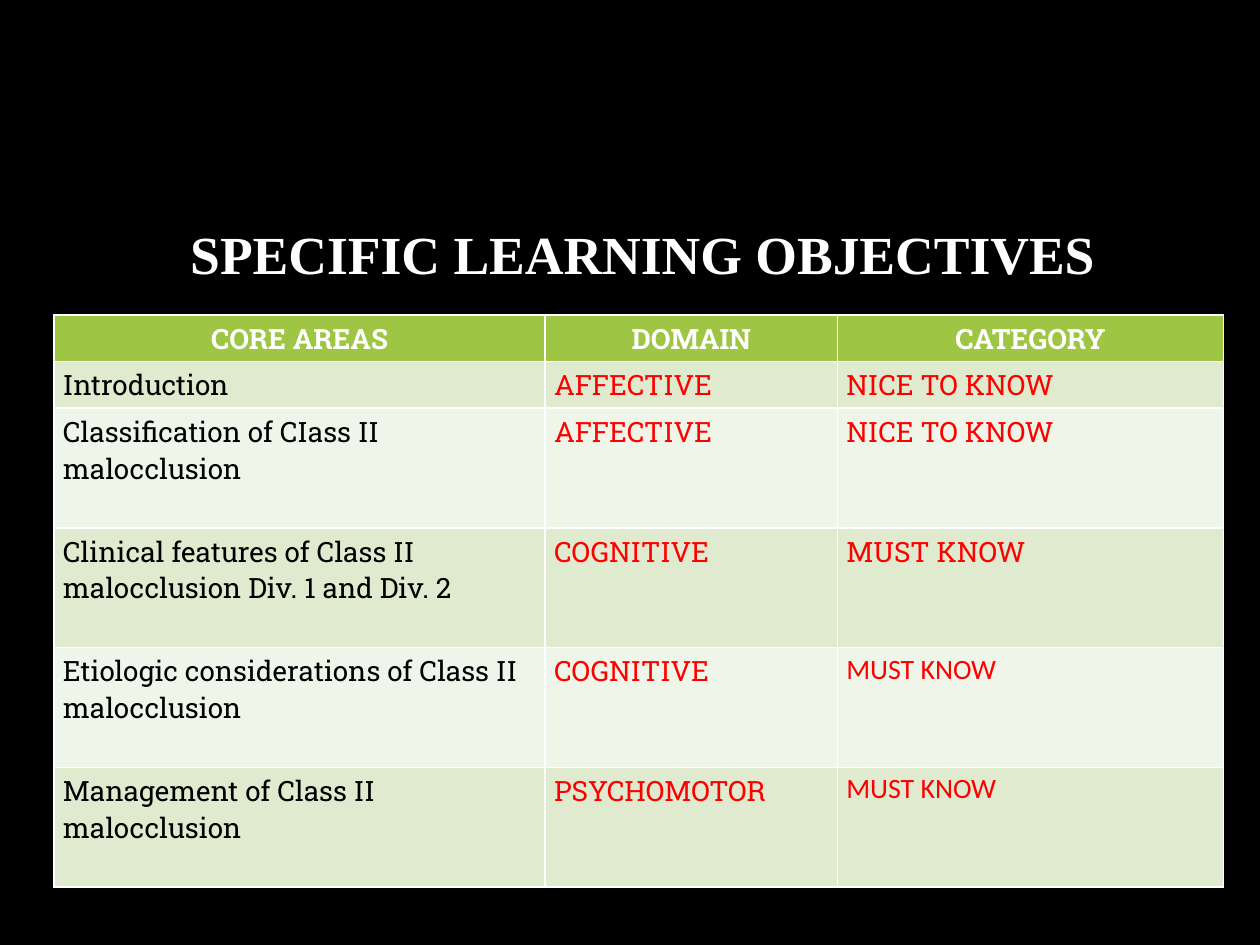
from pptx import Presentation
from pptx.dml.color import RGBColor
from pptx.enum.text import MSO_ANCHOR, PP_ALIGN
from pptx.util import Inches, Pt

CENTER = PP_ALIGN.CENTER
LEFT = PP_ALIGN.LEFT
MIDDLE = MSO_ANCHOR.MIDDLE

COLORS = {
    "background": "000000",
    "white": "FFFFFF",
    "header": "9EC544",
    "band_dark": "DFEACF",
    "band_light": "F0F5E9",
    "topic": "000000",
    "label": "FF0000",
}
TITLE_FONT = "Times New Roman"
TABLE_FONT = "Roboto Slab"
ALTERNATE_FONT = "Calibri"

HEADERS = ["CORE AREAS", "DOMAIN", "CATEGORY"]
OBJECTIVES = [
    ("Introduction", "AFFECTIVE", "NICE TO KNOW"),
    ("Classification of CIass II malocclusion", "AFFECTIVE", "NICE TO KNOW"),
    ("Clinical features of Class II malocclusion Div. 1 and Div. 2", "COGNITIVE", "MUST KNOW"),
    ("Etiologic considerations of Class II malocclusion", "COGNITIVE", "MUST KNOW"),
    ("Management of Class II malocclusion", "PSYCHOMOTOR", "MUST KNOW"),
]
ALTERNATE_FONT_CELLS = {(4, 2), (5, 2)}
COLUMN_SHARES = [0.42, 0.25, 0.33]
ROW_HEIGHTS = [0.37, 0.37] + [0.95] * 4


def color(name):
    return RGBColor.from_string(COLORS[name])


def style_paragraph(paragraph, font_name, size, color_name, bold, alignment):
    paragraph.alignment = alignment
    font = paragraph.font
    font.name = font_name
    font.size = Pt(size)
    font.bold = bold
    font.color.rgb = color(color_name)


def add_title(slide, left, top, width, height):
    shape = slide.shapes.add_textbox(Inches(left), Inches(top), Inches(width), Inches(height))
    frame = shape.text_frame
    frame.word_wrap = True
    frame.vertical_anchor = MIDDLE
    frame.text = "SPECIFIC LEARNING OBJECTIVES"
    paragraph = frame.paragraphs[0]
    paragraph.line_spacing = 0.9
    style_paragraph(paragraph, TITLE_FONT, 30.6, "white", True, CENTER)


def fill_cell(cell, text, fill_name, font_name, color_name, is_header):
    cell.fill.solid()
    cell.fill.fore_color.rgb = color(fill_name)
    cell.margin_left = cell.margin_right = Inches(0.07)
    cell.margin_top = cell.margin_bottom = Inches(0.04)
    cell.text = text
    alignment = CENTER if is_header else LEFT
    style_paragraph(cell.text_frame.paragraphs[0], font_name, 16, color_name, is_header, alignment)


def add_objectives_table(slide, left, top, width):
    rows = [HEADERS, *OBJECTIVES]
    table = slide.shapes.add_table(
        len(rows), len(HEADERS),
        Inches(left), Inches(top), Inches(width), Inches(sum(ROW_HEIGHTS)),
    ).table
    for column, share in zip(table.columns, COLUMN_SHARES):
        column.width = Inches(width * share)
    for row, height in zip(table.rows, ROW_HEIGHTS):
        row.height = Inches(height)
    for row_index, texts in enumerate(rows):
        is_header = row_index == 0
        band = "band_dark" if row_index % 2 else "band_light"
        fill_name = "header" if is_header else band
        for column_index, text in enumerate(texts):
            body_color = "label" if column_index else "topic"
            alternate = (row_index, column_index) in ALTERNATE_FONT_CELLS
            fill_cell(
                table.cell(row_index, column_index), text, fill_name,
                ALTERNATE_FONT if alternate else TABLE_FONT,
                "white" if is_header else body_color, is_header,
            )


def main():
    presentation = Presentation()
    presentation.slide_width = Inches(10)
    presentation.slide_height = Inches(7.5)
    slide = presentation.slides.add_slide(presentation.slide_layouts[6])
    slide.background.fill.solid()
    slide.background.fill.fore_color.rgb = color("background")
    add_title(slide, 1.3, 1.59, 7.6, 0.9)
    add_objectives_table(slide, 0.43, 2.5, 9.28)
    presentation.save("out.pptx")


if __name__ == "__main__":
    main()
